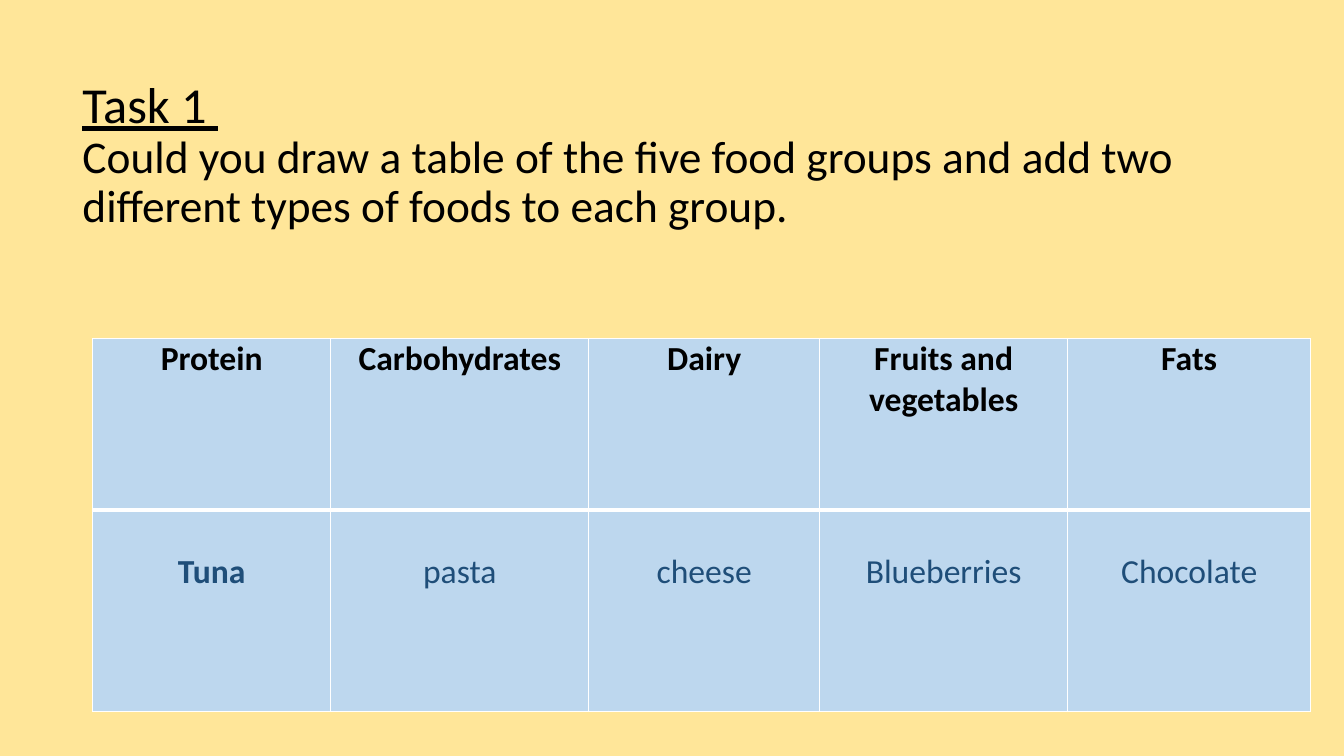
from lxml.etree import SubElement
from pptx import Presentation
from pptx.dml.color import RGBColor
from pptx.enum.text import MSO_ANCHOR as Anchor, PP_ALIGN as Align
from pptx.oxml.ns import qn
from pptx.util import Inches, Pt

TASK_RUNS = [
    ("Task 1 ", 36, True),
    ("Could you draw a table of the five food groups and add two "
     "different types of foods to each group.", 32.4, False),
]
FOOD_GROUPS = [
    ("Protein", "Tuna", 2.36),
    ("Carbohydrates", "pasta", 2.56),
    ("Dairy", "cheese", 2.29),
    ("Fruits and vegetables", "Blueberries", 2.46),
    ("Fats", "Chocolate", 2.41),
]
ROW_HEIGHTS = [1.7, 2]
FOOD_TOP_MARGIN = 0.41
COLORS = {"background": "FFE699", "cell": "BDD7EE", "border": "FFFFFF",
          "heading": "000000", "food": "1F4E79"}


def color(name):
    return RGBColor.from_string(COLORS[name])


def add_run(paragraph, text, size, color_name, bold=False, underline=False):
    run = paragraph.add_run()
    run.text = text
    font = run.font
    font.name = "Calibri"
    font.size = Pt(size)
    font.bold = bold
    font.underline = underline
    font.color.rgb = color(color_name)


def add_borders(cell, widths):
    properties = cell._tc.get_or_add_tcPr()
    for index, (side, width) in enumerate(widths.items()):
        line = properties.makeelement(qn(f"a:ln{side}"), {"w": str(Pt(width))})
        fill = SubElement(line, qn("a:solidFill"))
        SubElement(fill, qn("a:srgbClr"), val=COLORS["border"])
        properties.insert(index, line)


def fill_cell(cell, text, color_name, bold, top_margin, widths):
    cell.fill.solid()
    cell.fill.fore_color.rgb = color("cell")
    cell.margin_left = cell.margin_right = Inches(0.07)
    cell.margin_top = Inches(top_margin)
    cell.margin_bottom = 0
    paragraph = cell.text_frame.paragraphs[0]
    paragraph.alignment = Align.CENTER
    add_run(paragraph, text, 24, color_name, bold)
    add_borders(cell, widths)


def add_task(slide):
    box = slide.shapes.add_textbox(
        Inches(0.72), Inches(0.77), Inches(11.5), Inches(1.56))
    frame = box.text_frame
    frame.word_wrap = True
    frame.vertical_anchor = Anchor.MIDDLE
    paragraph = frame.paragraphs[0]
    paragraph.line_spacing = 0.9
    for index, (text, size, underline) in enumerate(TASK_RUNS):
        if index:
            paragraph.add_line_break()
        add_run(paragraph, text, size, "heading", underline=underline)


def add_food_table(slide):
    total_width = sum(width for _, _, width in FOOD_GROUPS)
    table = slide.shapes.add_table(
        len(ROW_HEIGHTS), len(FOOD_GROUPS), Inches(0.92), Inches(3.36),
        Inches(total_width), Inches(sum(ROW_HEIGHTS))).table
    for row, height in zip(table.rows, ROW_HEIGHTS):
        row.height = Inches(height)
    heading_borders = {"L": 1, "R": 1, "T": 1, "B": 3}
    food_borders = {"L": 1, "R": 1, "T": 3, "B": 1}
    for index, (group, food, width) in enumerate(FOOD_GROUPS):
        table.columns[index].width = Inches(width)
        fill_cell(table.cell(0, index), group, "heading", True, 0,
                  heading_borders)
        fill_cell(table.cell(1, index), food, "food", index == 0,
                  FOOD_TOP_MARGIN, food_borders)


def main():
    presentation = Presentation()
    presentation.slide_width = Inches(13.33)
    presentation.slide_height = Inches(7.5)
    slide = presentation.slides.add_slide(presentation.slide_layouts[6])
    slide.background.fill.solid()
    slide.background.fill.fore_color.rgb = color("background")
    add_task(slide)
    add_food_table(slide)
    presentation.save("out.pptx")


if __name__ == "__main__":
    main()
